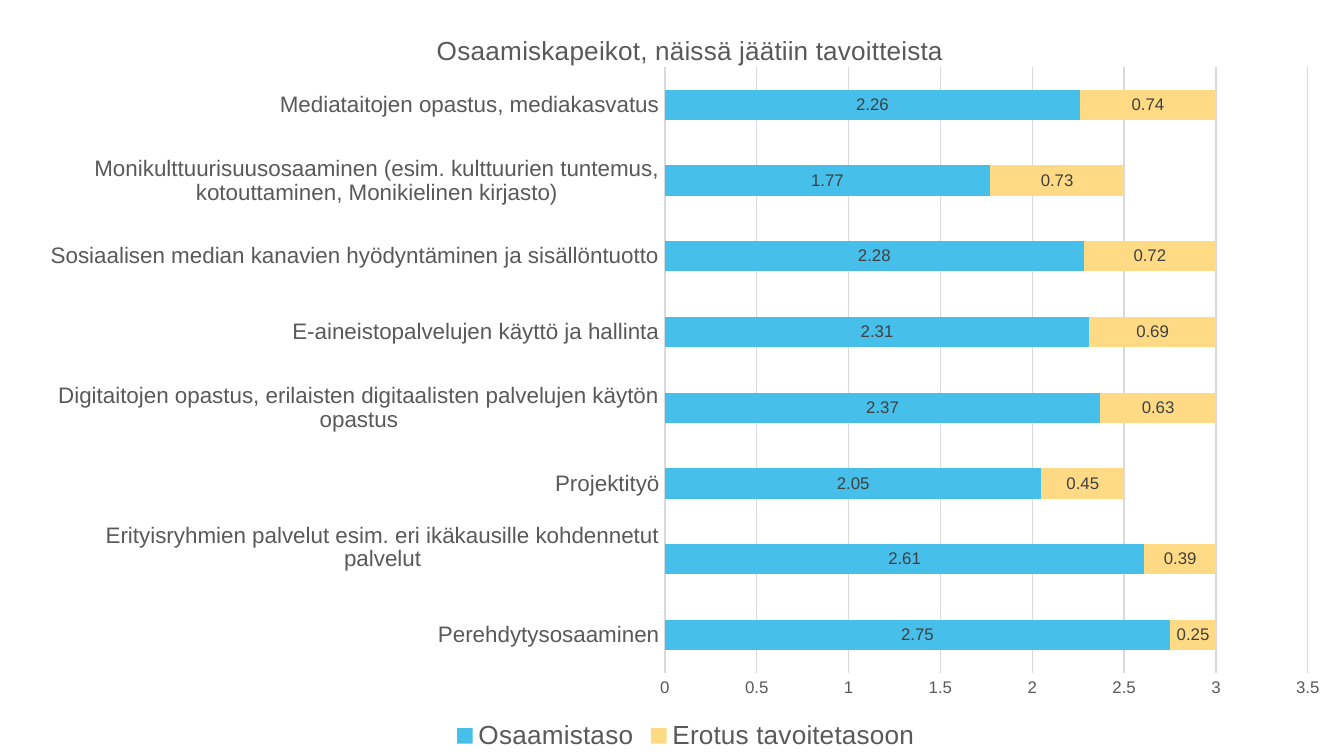
from lxml.etree import SubElement
from pptx import Presentation
from pptx.chart.data import CategoryChartData
from pptx.dml.color import RGBColor
from pptx.enum.chart import (XL_CHART_TYPE, XL_LABEL_POSITION,
                             XL_LEGEND_POSITION, XL_TICK_MARK)
from pptx.oxml.ns import qn
from pptx.util import Pt

# Content, from the bottom bar to the top one
TITLE = "Osaamiskapeikot, näissä jäätiin tavoitteista"
ROWS = [
    ("Perehdytysosaaminen", 2.75, 0.25),
    ("Erityisryhmien palvelut esim. eri ikäkausille kohdennetut palvelut\n", 2.61, 0.39),
    ("Projektityö", 2.05, 0.45),
    ("Digitaitojen opastus, erilaisten digitaalisten palvelujen käytön opastus", 2.37, 0.63),
    ("E-aineistopalvelujen käyttö ja hallinta", 2.31, 0.69),
    ("Sosiaalisen median kanavien hyödyntäminen ja sisällöntuotto", 2.28, 0.72),
    ("Monikulttuurisuusosaaminen (esim. kulttuurien tuntemus, kotouttaminen, "
     "Monikielinen kirjasto)", 1.77, 0.73),
    ("Mediataitojen opastus, mediakasvatus", 2.26, 0.74),
]
SERIES = [("Osaamistaso", "46BFEA"), ("Erotus tavoitetasoon", "FFDA85")]
GREY, LABEL, GRID = "595959", "404040", "D9D9D9"

# Geometry in px
PX = 914400 / 134.4
SLIDE_W, SLIDE_H = 1344, 756
CHART = (28, 0, 1316, 756)
PLOT = (665, 67, 643, 606)
TITLE_AT = (432, 29)


def emu(px):
    return round(px * PX)


def rgb(color):
    return RGBColor.from_string(color)


def set_font(font, size, color):
    font.name, font.size, font.bold = "Arial", Pt(size), False
    font.color.rgb = rgb(color)


def set_line(line, color):
    line.width = Pt(0.75)
    line.color.rgb = rgb(color)


def set_layout(parent, before, box, inner=False):
    """Place a chart part by fractions of the chart's size."""
    for old in parent.findall(qn("c:layout")):
        parent.remove(old)
    layout = SubElement(parent, qn("c:layout"))
    manual = SubElement(layout, qn("c:manualLayout"))
    left, top, width, height = CHART
    values = [(px - start) / size for px, start, size
              in zip(box, (left, top, 0, 0), (width, height) * 2)]
    parts = [("layoutTarget", "inner")] if inner else []
    parts += [("xMode", "edge"), ("yMode", "edge")]
    parts += [(tag, f"{v:.4f}") for tag, v in zip("xywh", values)]
    for tag, val in parts:
        SubElement(manual, qn(f"c:{tag}")).set("val", val)
    parent.insert(before, layout)


prs = Presentation()
prs.slide_width, prs.slide_height = emu(SLIDE_W), emu(SLIDE_H)
s = prs.slides.add_slide(prs.slide_layouts[6])

# Stacked bar chart
names, *columns = zip(*ROWS)
data = CategoryChartData()
data.categories = names
for (name, _), values in zip(SERIES, columns):
    data.add_series(name, values)
chart = s.shapes.add_chart(XL_CHART_TYPE.BAR_STACKED,
                           *map(emu, CHART), data).chart
set_font(chart.font, 10, "000000")
set_layout(chart.plots[0]._element.getparent(), 0, PLOT, inner=True)

# Title
p = chart.chart_title.text_frame.paragraphs[0]
r = p.add_run()
r.text = TITLE
set_font(r.font, 14, GREY)
chart.chart_title.include_in_layout = False
set_layout(chart.chart_title._element, 1, TITLE_AT)

# Bars and their labels
plot = chart.plots[0]
plot.gap_width, plot.overlap, plot.vary_by_categories = 150, 100, False
for series, (_, color) in zip(plot.series, SERIES):
    series.format.fill.solid()
    series.format.fill.fore_color.rgb = rgb(color)
    labels = series.data_labels
    labels.show_value = True
    labels.position = XL_LABEL_POSITION.CENTER
    set_font(labels.font, 9, LABEL)

# Axes
cat, val = chart.category_axis, chart.value_axis
for axis, size in ((cat, 12), (val, 9)):
    axis.major_tick_mark = axis.minor_tick_mark = XL_TICK_MARK.NONE
    set_font(axis.tick_labels.font, size, GREY)
set_line(cat.format.line, GRID)
val.format.line.fill.background()
val.minimum_scale, val.maximum_scale, val.major_unit = 0, 3.5, 0.5
val.has_major_gridlines = True
set_line(val.major_gridlines.format.line, GRID)

# Legend
chart.has_legend = True
chart.legend.position = XL_LEGEND_POSITION.BOTTOM
chart.legend.include_in_layout = False
set_font(chart.legend.font, 14, GREY)

prs.save("out.pptx")
